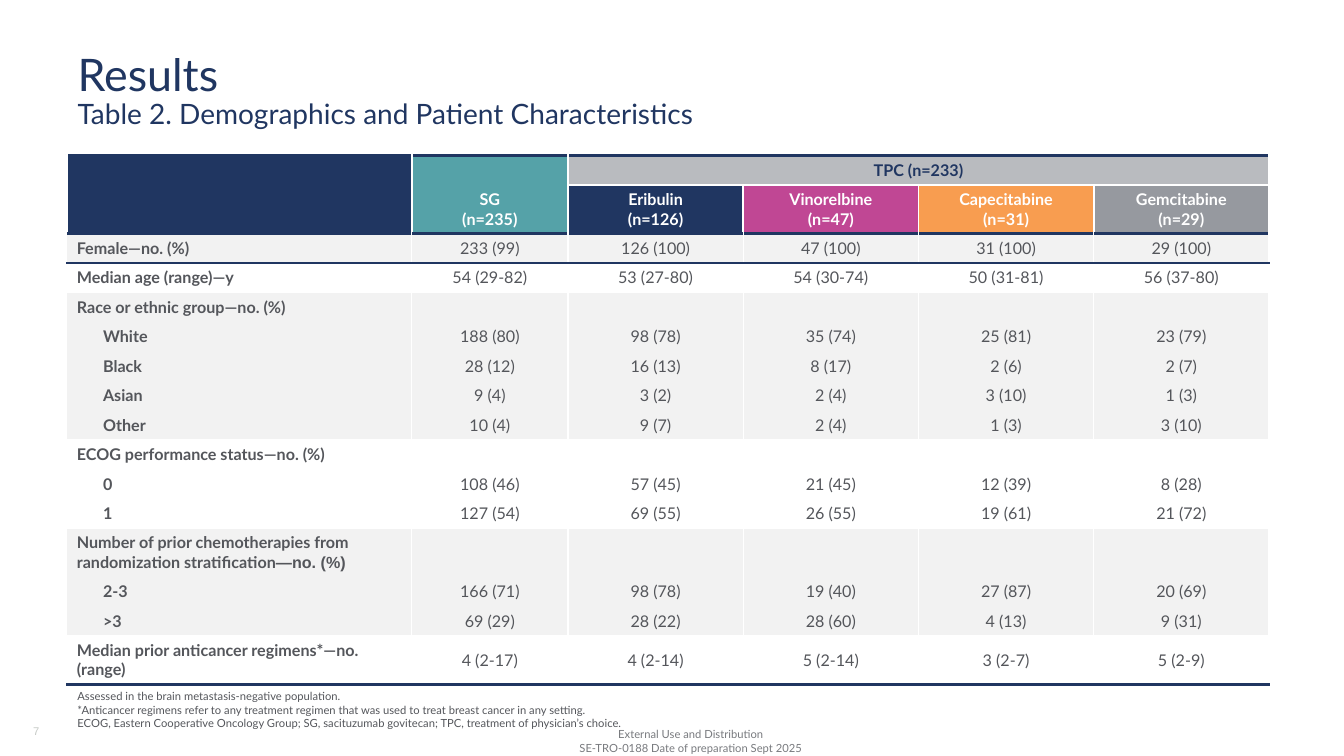
from dataclasses import dataclass
from lxml.etree import SubElement
from pptx import Presentation
from pptx.dml.color import RGBColor
from pptx.enum.text import MSO_ANCHOR as Anchor, MSO_AUTO_SIZE as AutoSize, PP_ALIGN as Align
from pptx.oxml.ns import qn
from pptx.util import Pt

TITLE = ("Results", "Table 2. Demographics and Patient Characteristics")
ARMS = [
    ("SG", "(n=235)"),
    ("Eribulin", "(n=126)"),
    ("Vinorelbine", "(n=47)"),
    ("Capecitabine", "(n=31)"),
    ("Gemcitabine", "(n=29)"),
]
COMPARATOR = "TPC (n=233)"
BLANK = [""] * 5
GROUPS = [
    [("Female—no. (%)", ["233 (99)", "126 (100)", "47 (100)", "31 (100)", "29 (100)"])],
    [("Median age (range)—y", ["54 (29-82)", "53 (27-80)", "54 (30-74)", "50 (31-81)", "56 (37-80)"])],
    [
        ("Race or ethnic group—no. (%)", BLANK),
        ("White", ["188 (80)", "98 (78)", "35 (74)", "25 (81)", "23 (79)"]),
        ("Black", ["28 (12)", "16 (13)", "8 (17)", "2 (6)", "2 (7)"]),
        ("Asian", ["9 (4)", "3 (2)", "2 (4)", "3 (10)", "1 (3)"]),
        ("Other", ["10 (4)", "9 (7)", "2 (4)", "1 (3)", "3 (10)"]),
    ],
    [
        ("ECOG performance status—no. (%)", BLANK),
        ("0", ["108 (46)", "57 (45)", "21 (45)", "12 (39)", "8 (28)"]),
        ("1", ["127 (54)", "69 (55)", "26 (55)", "19 (61)", "21 (72)"]),
    ],
    [
        (("Number of prior chemotherapies from randomization stratification", "—no. (%)"), BLANK),
        ("2-3", ["166 (71)", "98 (78)", "19 (40)", "27 (87)", "20 (69)"]),
        (">3", ["69 (29)", "28 (22)", "28 (60)", "4 (13)", "9 (31)"]),
    ],
    [("Median prior anticancer regimens*—no. (range)", ["4 (2-17)", "4 (2-14)", "5 (2-14)", "3 (2-7)", "5 (2-9)"])],
]
FOOTNOTES = [
    "Assessed in the brain metastasis-negative population.",
    "*Anticancer regimens refer to any treatment regimen that was used to treat breast cancer in any setting.",
    "ECOG, Eastern Cooperative Oncology Group; SG, sacituzumab govitecan; TPC, treatment of physician’s choice.",
]
FOOTER = ["External Use and Distribution", "SE-TRO-0188 Date of preparation Sept 2025"]
PAGE_NUMBER = "7"


@dataclass(frozen=True)
class Theme:
    """Colours, fonts and type sizes of the slide."""
    navy: str = "203661"
    white: str = "FFFFFF"
    stripe: str = "F2F2F2"
    text: str = "54565B"
    footer: str = "787A7E"
    number: str = "C6CAC6"
    comparator: str = "B9BBBF"
    arms: tuple = ("55A2A8", "203661", "C04794", "F89D50", "96999F")
    font: str = "Lato"
    second_font: str = "Arial"
    title: float = 32
    subtitle: float = 20
    table: float = 11.5
    small: float = 8


theme = Theme()
COLUMNS = [246.4, 111.6] + [125.2] * 4
SHORT_ROW, TALL_ROW, INDENT = 21, 34.8, 18.7
TALL_ROWS = {1, 12, 15}


def add_span(para, text, size, color, bold=False, font=theme.font):
    """Append one formatted run to a paragraph."""
    span = para.add_run()
    span.text = text
    for name, value in {"size": Pt(size), "bold": bold, "name": font}.items():
        setattr(span.font, name, value)
    span.font.color.rgb = RGBColor.from_string(color)


def write_lines(frame, lines, size, color, align=Align.LEFT, bold=False, font=theme.font):
    """Fill a text frame with one paragraph per line."""
    for index, line in enumerate(lines):
        para = frame.add_paragraph() if index else frame.paragraphs[0]
        para.alignment = align
        parts = line if isinstance(line, tuple) else (line,)
        for part, face in zip(parts, (font, theme.second_font)):
            if part:
                add_span(para, part, size, color, bold, face)
            else:
                SubElement(para._p, qn("a:endParaRPr"), sz=str(int(size * 100)))


def add_text(page, place, lines, anchor, **look):
    """Add a wrapping text box."""
    box = page.shapes.add_textbox(*map(Pt, place))
    for name, value in {"word_wrap": True, "vertical_anchor": anchor}.items():
        setattr(box.text_frame, name, value)
    write_lines(box.text_frame, lines, **look)


def style_cell(cell, fill, anchor, edges):
    """Set the fill, anchor and four borders of a cell."""
    for side, edge in zip("LRTB", edges):
        color, width = edge or (None, 0)
        line = SubElement(cell._tc.get_or_add_tcPr(), qn(f"a:ln{side}"), w=str(Pt(width)))
        paint = SubElement(line, qn("a:solidFill" if color else "a:noFill"))
        if color:
            SubElement(paint, qn("a:srgbClr"), val=color)
    cell.fill.solid()
    cell.fill.fore_color.rgb = RGBColor.from_string(fill)
    cell.vertical_anchor = anchor


def row_rules():
    """Return the horizontal rule above each row, keyed by row."""
    rules, row = {}, 2
    for group in GROUPS:
        rules[row] = (theme.white, 1)
        row += len(group)
    heavy = (theme.navy, 2.25)
    return rules | {0: heavy, 2: heavy, 3: (theme.navy, 1.5), row: heavy}


def add_header(table, rules):
    """Build the two header rows with their merged cells."""
    heavy, gap = rules[0], (theme.white, 1.5)
    fills = (theme.navy, *theme.arms)
    for row in range(2):
        for column, fill in enumerate(fills):
            cell = table.cell(row, column)
            merged = column < 2
            top = heavy if row == 0 else None if merged else gap
            bottom = heavy if row or merged else gap
            shade = theme.comparator if row == 0 and not merged else fill
            anchor = Anchor.BOTTOM if row or merged else Anchor.MIDDLE
            style_cell(cell, shade, anchor, (gap, gap, top, bottom))
            lines, color = [""], theme.white
            if row == 0 and column == 2:
                lines, color = [COMPARATOR], theme.navy
            elif column and row == (column > 1):
                lines = ARMS[column - 1]
            write_lines(cell.text_frame, list(lines), theme.table, color, Align.CENTER, True)
    for column in range(2):
        table.cell(0, column).merge(table.cell(1, column))
    table.cell(0, 2).merge(table.cell(0, 5))


def add_body(table, rules):
    """Build the striped groups of characteristics."""
    row, side = 2, (theme.white, 1)
    for number, group in enumerate(GROUPS):
        fill = theme.white if number % 2 else theme.stripe
        for position, (label, values) in enumerate(group):
            for column, text in enumerate([label, *values]):
                cell = table.cell(row, column)
                style_cell(cell, fill, Anchor.MIDDLE, (side, side, rules.get(row), rules.get(row + 1)))
                align = Align.CENTER if column else Align.LEFT
                write_lines(cell.text_frame, [text], theme.table, theme.text, align, not column)
            if position:
                table.cell(row, 0).text_frame.paragraphs[0]._p.get_or_add_pPr().set("marL", str(Pt(INDENT)))
            row += 1


def add_title(page):
    """Place the two-size title in its placeholder."""
    title = page.shapes.title
    for name, value in zip(("left", "top", "width", "height"), (48.2, 10.8, 860.4, 86.4)):
        setattr(title, name, Pt(value))
    frame = title.text_frame
    for name, value in {"vertical_anchor": Anchor.BOTTOM, "auto_size": AutoSize.NONE, "word_wrap": True}.items():
        setattr(frame, name, value)
    para = frame.paragraphs[0]
    para.alignment, para.line_spacing = Align.LEFT, 0.9
    add_span(para, TITLE[0], theme.title, theme.navy)
    para.add_line_break()
    SubElement(para._p.find(qn("a:br")), qn("a:rPr"), sz=str(theme.title * 100))
    add_span(para, TITLE[1], theme.subtitle, theme.navy)


def main():
    """Build and save the slide."""
    deck = Presentation()
    deck.slide_width, deck.slide_height = Pt(960), Pt(540)
    page = deck.slides.add_slide(deck.slide_layouts[5])
    add_text(page, (370, 517.7, 247, 23), FOOTER, Anchor.MIDDLE,
             size=theme.small, color=theme.footer, align=Align.CENTER)
    add_title(page)
    add_text(page, (16.6, 507.6, 43.2, 23), [PAGE_NUMBER], Anchor.BOTTOM,
             size=theme.small, color=theme.number, font=theme.second_font)
    count = 2 + sum(map(len, GROUPS))
    heights = [TALL_ROW if row in TALL_ROWS else SHORT_ROW for row in range(count)]
    place = (47.7, 110.9, sum(COLUMNS), sum(heights))
    table = page.shapes.add_table(count, len(COLUMNS), *map(Pt, place)).table
    for column, width in zip(table.columns, COLUMNS):
        column.width = Pt(width)
    for row, height in zip(table.rows, heights):
        row.height = Pt(height)
    rules = row_rules()
    add_header(table, rules)
    add_body(table, rules)
    add_text(page, (48.2, 469.4, 863.3, 55.4), FOOTNOTES, Anchor.BOTTOM,
             size=theme.small, color=theme.text)
    deck.save("out.pptx")


if __name__ == "__main__":
    main()
